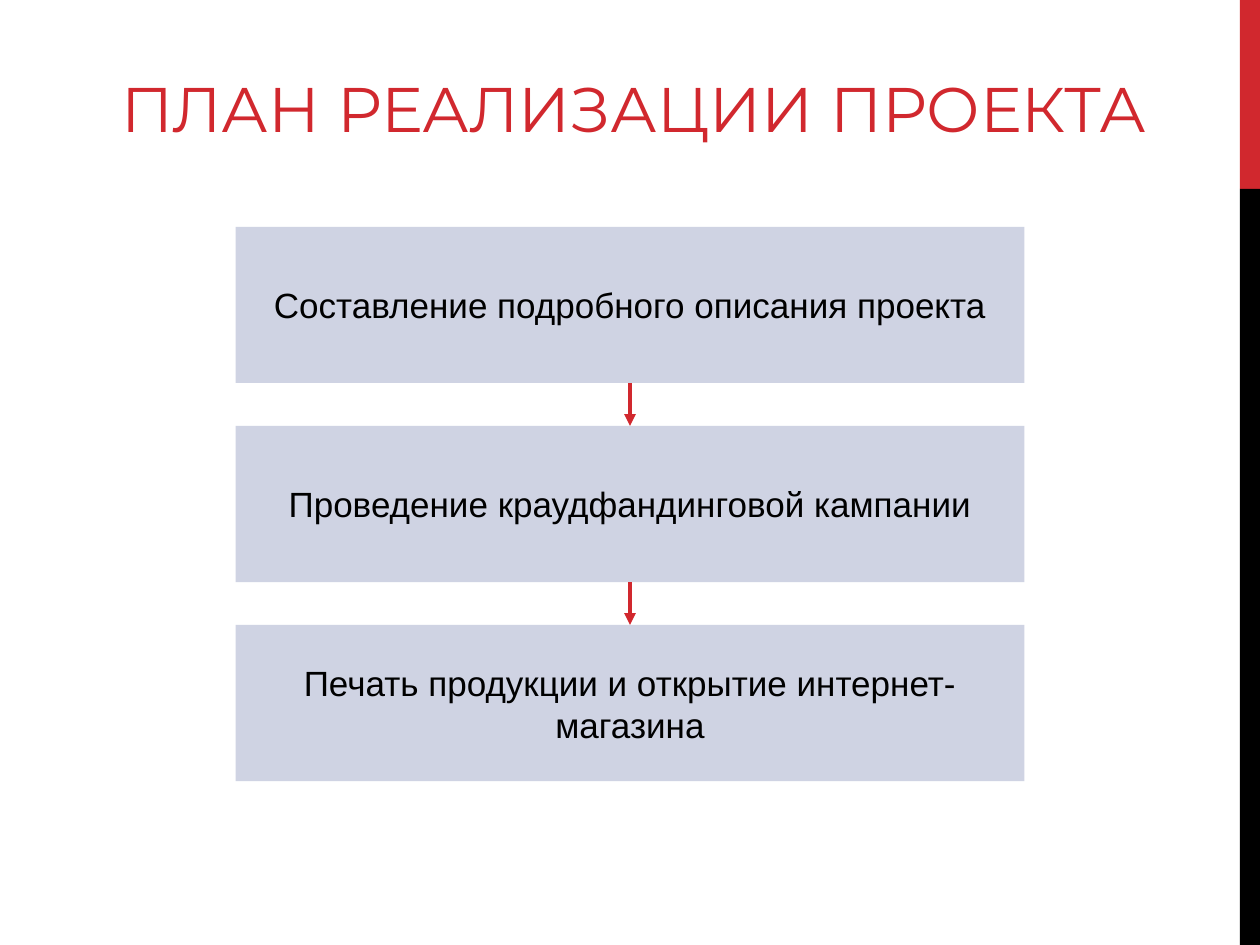
from pptx import Presentation
from pptx.dml.color import RGBColor
from pptx.enum.shapes import MSO_CONNECTOR, MSO_SHAPE
from pptx.enum.text import MSO_ANCHOR, PP_ALIGN
from pptx.oxml.ns import qn
from pptx.util import Inches, Pt
from lxml import etree

RECTANGLE = MSO_SHAPE.RECTANGLE
STRAIGHT = MSO_CONNECTOR.STRAIGHT
MIDDLE = MSO_ANCHOR.MIDDLE
CENTER = PP_ALIGN.CENTER
TOP, BOTTOM = 0, 2

STEPS = [
    "Составление подробного описания проекта",
    "Проведение краудфандинговой кампании",
    "Печать продукции и открытие интернет-магазина",
]
STEP_TOP, STEP_PITCH = 1.8, 1.58


def color(value):
    return RGBColor.from_string(value)


def write_text(shape, text, font="Arial", size=20, ink="000000", before=0, after=0):
    frame = shape.text_frame
    frame.word_wrap = True
    frame.vertical_anchor = MIDDLE
    frame.margin_left = frame.margin_right = Inches(0.1)
    frame.margin_top = frame.margin_bottom = Inches(0.1)
    para = frame.paragraphs[0]
    para.alignment = CENTER
    para.space_before = Pt(before)
    para.space_after = Pt(after)
    span = para.add_run()
    span.text = text
    span.font.name = font
    span.font.size = Pt(size)
    span.font.color.rgb = color(ink)


class PlanSlide:
    accent = "D1282E"
    dark = "000000"
    step_fill = "CFD3E3"
    title_font = "Montserrat"

    def __init__(self, page):
        self.page = page

    def block(self, left, top, width, height, fill):
        box = self.page.shapes.add_shape(
            RECTANGLE, Inches(left), Inches(top), Inches(width), Inches(height)
        )
        box.shadow.inherit = False
        box.fill.solid()
        box.fill.fore_color.rgb = color(fill)
        box.line.fill.background()
        return box

    def title(self, text):
        box = self.page.shapes.add_textbox(
            Inches(0.5), Inches(0.33), Inches(9.06), Inches(1.04)
        )
        write_text(box, text, font=self.title_font, size=36, ink=self.accent)

    def step(self, top, text):
        box = self.block(1.87, top, 6.26, 1.24, self.step_fill)
        write_text(box, text, before=4.8, after=6)
        return box

    def arrow(self, upper, lower):
        link = self.page.shapes.add_connector(STRAIGHT, 0, 0, 0, 0)
        link.begin_connect(upper, BOTTOM)
        link.end_connect(lower, TOP)
        link.line.color.rgb = color(self.accent)
        link.line.width = Pt(2.25)
        outline = link.line._get_or_add_ln()
        etree.SubElement(outline, qn("a:tailEnd"), type="triangle")
        etree.SubElement(link._element.spPr, qn("a:effectLst"))


def main():
    deck = Presentation()
    deck.slide_width = Inches(10)
    deck.slide_height = Inches(7.5)
    plan = PlanSlide(deck.slides.add_slide(deck.slide_layouts[6]))

    plan.block(9.84, 0, 0.16, 1.5, plan.accent)
    plan.block(9.84, 1.5, 0.16, 6, plan.dark)
    plan.title("ПЛАН РЕАЛИЗАЦИИ ПРОЕКТА")

    steps = [
        plan.step(STEP_TOP + index * STEP_PITCH, text)
        for index, text in enumerate(STEPS)
    ]
    for upper, lower in zip(steps, steps[1:]):
        plan.arrow(upper, lower)

    deck.save("out.pptx")


if __name__ == "__main__":
    main()
